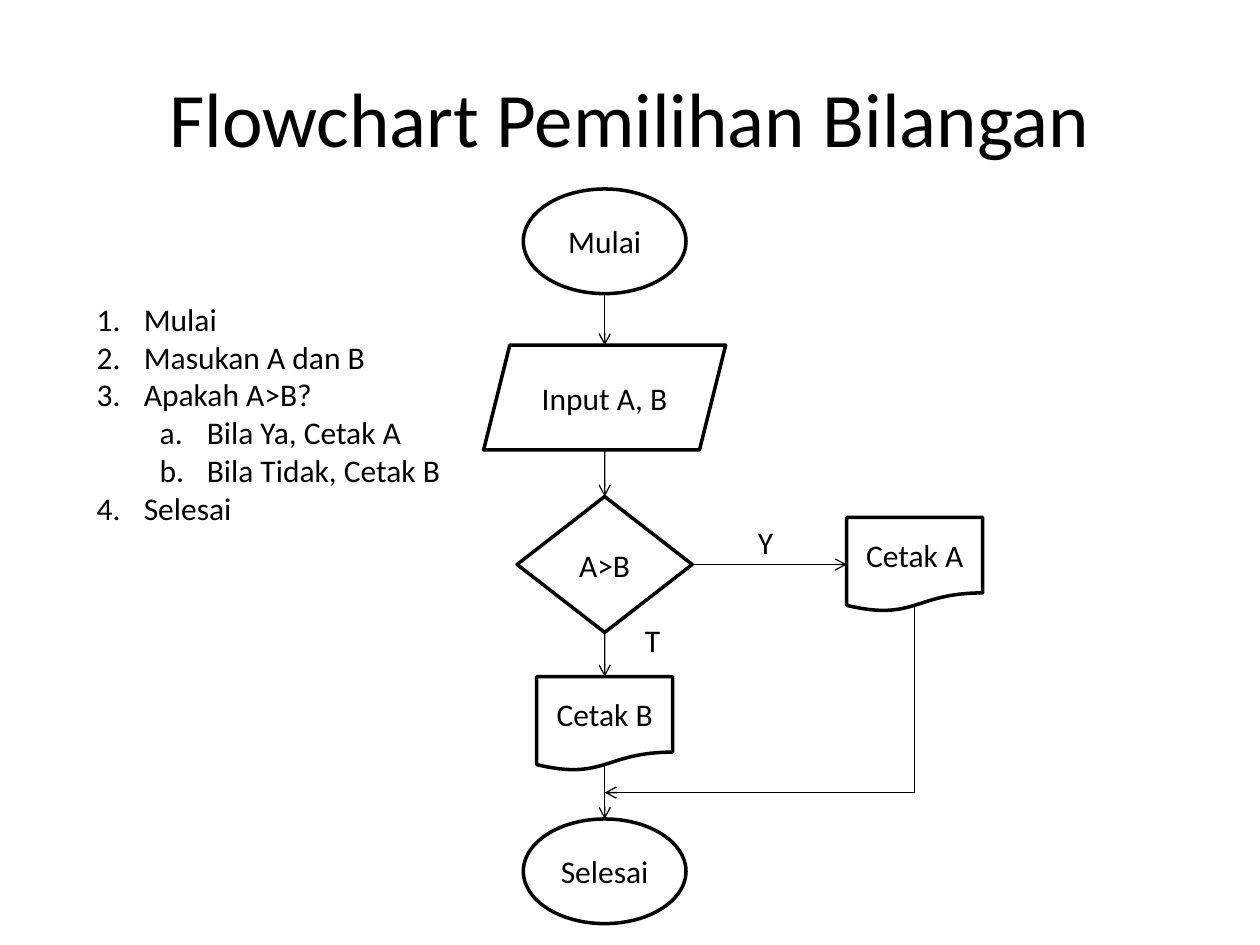
from lxml.etree import SubElement
from pptx import Presentation
from pptx.dml.color import RGBColor
from pptx.enum.shapes import MSO_CONNECTOR as Link, MSO_SHAPE as Shape
from pptx.enum.text import MSO_ANCHOR as Anchor, MSO_AUTO_SIZE as AutoSize, PP_ALIGN as Align
from pptx.oxml.ns import qn
from pptx.util import Cm, Pt

BLACK, WHITE = "000000", "FFFFFF"
FONT = "Calibri"


def color(value):
    return RGBColor.from_string(value)


def style_text(para, size=18, align=None):
    para.alignment = align
    para.font.size = Pt(size)
    para.font.name = FONT
    para.font.color.rgb = color(BLACK)


def add_title(page, left, top, width, height):
    title = page.shapes.title
    title.left, title.top, title.width, title.height = map(Cm, (left, top, width, height))
    title.text_frame.text = "Flowchart Pemilihan Bilangan"
    title.text_frame.vertical_anchor = Anchor.MIDDLE
    style_text(title.text_frame.paragraphs[0], 44, Align.CENTER)


def add_text_box(page, left, top, width, height, text):
    box = page.shapes.add_textbox(Cm(left), Cm(top), Cm(width), Cm(height))
    frame = box.text_frame
    frame.text = text
    frame.word_wrap = False
    frame.auto_size = AutoSize.SHAPE_TO_FIT_TEXT
    return frame


def add_steps(page, left, top, width, height):
    steps = [(0, "Mulai"), (0, "Masukan A dan B"), (0, "Apakah A>B?"),
             (1, "Bila Ya, Cetak A"), (1, "Bila Tidak, Cetak B"), (0, "Selesai")]
    numbering = ["arabicPeriod", "alphaLcPeriod"]
    text = "\n".join(step for _, step in steps)
    frame = add_text_box(page, left, top, width, height, text)
    for para, (level, _) in zip(frame.paragraphs, steps):
        para.level = level
        props = para._p.get_or_add_pPr()
        props.set("marL", str(Cm(0.95 + 1.27 * level)))
        props.set("indent", str(Cm(-0.95)))
        SubElement(props, qn("a:buFont")).set("typeface", "+mj-lt")
        SubElement(props, qn("a:buAutoNum")).set("type", numbering[level])
        style_text(para)


def add_node(page, kind, center, top, width, height, text):
    node = page.shapes.add_shape(kind, Cm(center - width / 2), Cm(top), Cm(width), Cm(height))
    node.shadow.inherit = False
    node.fill.solid()
    node.fill.fore_color.rgb = color(WHITE)
    node.line.color.rgb = color(BLACK)
    node.line.width = Pt(2)
    node.text_frame.text = text
    node.text_frame.vertical_anchor = Anchor.MIDDLE
    style_text(node.text_frame.paragraphs[0], align=Align.CENTER)
    return node


def add_arrow(page, start, end, kind=Link.STRAIGHT, arrow_end="a:tailEnd"):
    arrow = page.shapes.add_connector(kind, *map(Cm, start + end))
    arrow.line.color.rgb = color(BLACK)
    arrow.line.width = Pt(0.75)
    SubElement(arrow.line._get_or_add_ln(), qn(arrow_end)).set("type", "arrow")
    SubElement(arrow._element.spPr, qn("a:effectLst"))
    return arrow


def add_flowchart(page, left, top):
    axis, side = left + 2.44, left + 8.69
    oval, sheet = (3.28, 2.11), (2.74, 1.9)
    input_top, test_top, sheet_top, end_top = (top + y for y in (3.15, 6.2, 9.83, 12.7))
    test_middle = test_top + 1.37
    merge = top + 12.17

    # Nodes
    add_node(page, Shape.OVAL, axis, top, *oval, "Mulai")
    add_node(page, Shape.PARALLELOGRAM, axis, input_top, 4.88, 2.11, "Input A, B")
    test = add_node(page, Shape.DIAMOND, axis, test_top, 3.53, 2.74, "A>B")
    print_a = add_node(page, Shape.FLOWCHART_DOCUMENT, side, top + 6.62, *sheet, "Cetak A")
    print_b = add_node(page, Shape.FLOWCHART_DOCUMENT, axis, sheet_top, *sheet, "Cetak B")
    add_node(page, Shape.OVAL, axis, end_top, *oval, "Selesai")

    # Main path downwards
    add_arrow(page, (axis, top + 2.11), (axis, input_top))
    into_test = add_arrow(page, (axis, input_top + 2.11), (axis, test_top))
    into_test.end_connect(test, 0)
    no = add_arrow(page, (axis, test_top + 2.74), (axis, sheet_top))
    no.begin_connect(test, 2)
    no.end_connect(print_b, 0)
    add_arrow(page, (axis, sheet_top + 1.8), (axis, end_top))

    # Side path and its return to the main path
    yes = add_arrow(page, (axis + 1.77, test_middle), (side - 1.37, test_middle))
    yes.begin_connect(test, 3)
    yes.end_connect(print_a, 1)
    back = add_arrow(page, (axis, merge), (side, top + 8.4), Link.ELBOW, "a:headEnd")
    back._element.spPr.find(qn("a:prstGeom")).set("prst", "bentConnector2")

    # Branch labels
    for text, x, y in [("Y", 5.28, 6.6), ("T", 3, 8.58)]:
        frame = add_text_box(page, left + x, top + y, 0.82, 1.03, text)
        style_text(frame.paragraphs[0])


def main():
    deck = Presentation()
    deck.slide_width, deck.slide_height = Cm(25.4), Cm(19.05)
    page = deck.slides.add_slide(deck.slide_layouts[5])
    add_title(page, 1.27, 0.76, 22.86, 3.18)
    add_flowchart(page, 9.75, 3.81)
    add_steps(page, 1.7, 5.92, 7.52, 4.88)
    deck.save("out.pptx")


if __name__ == "__main__":
    main()
